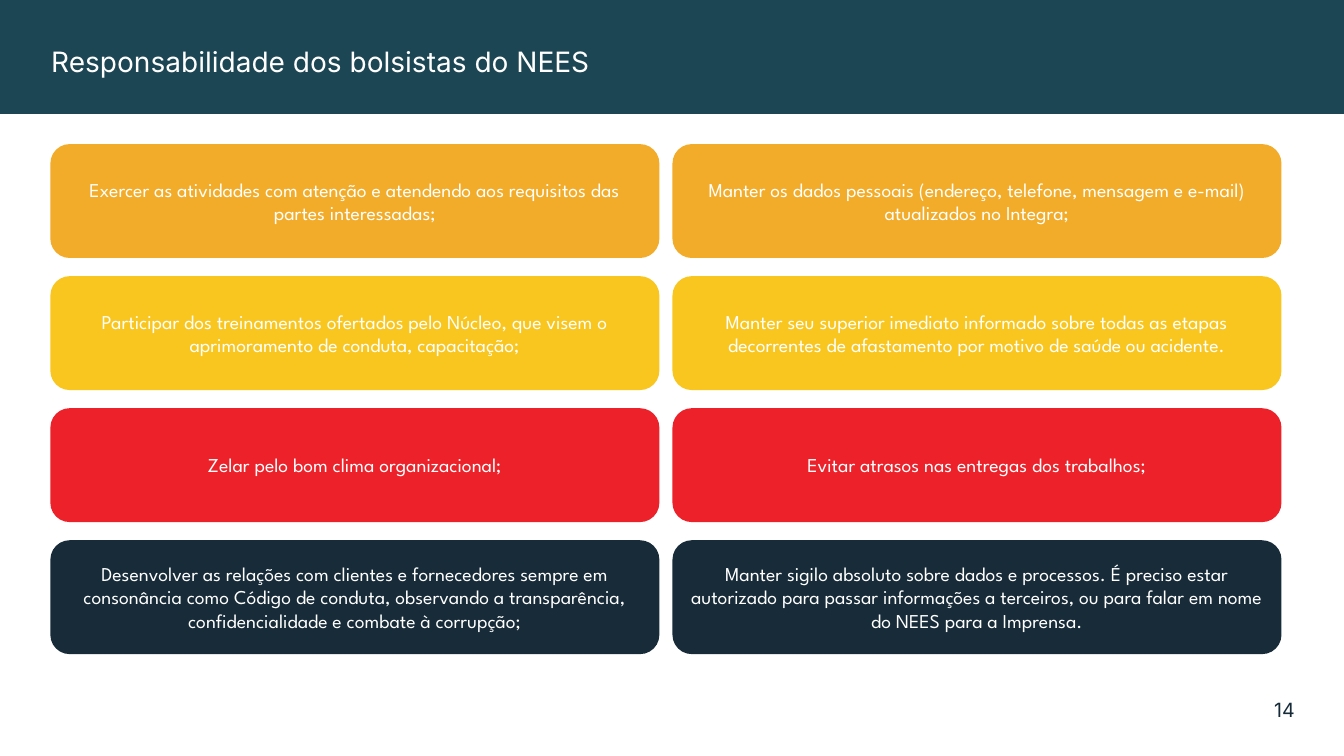
from pptx import Presentation
from pptx.dml.color import RGBColor
from pptx.enum.shapes import MSO_SHAPE
from pptx.enum.text import MSO_ANCHOR, PP_ALIGN
from pptx.util import Inches, Pt

THEME = {
    "band": "1C4654", "light": "FFFFFF", "number": "162B39",
    "rows": ["F2AC29", "F9C620", "ED2129", "182B39"],
    "heading_font": "Inter", "body_font": "League Spartan",
    "title_size": 20, "body_size": 14,
}

# Grid of cards, in inches
LEFT, TOP = 0.5, 1.43
CARD_W, CARD_H = 6.04, 1.13
COL_STEP, ROW_STEP = 6.17, 1.31

DUTIES = [
    ("Exercer as atividades com atenção e atendendo aos requisitos das partes interessadas;",
     "Manter os dados pessoais (endereço, telefone, mensagem e e-mail) atualizados no Integra;"),
    ("Participar dos treinamentos ofertados pelo Núcleo, que visem o aprimoramento de conduta, capacitação;",
     "Manter seu superior imediato informado sobre todas as etapas decorrentes de afastamento "
     "por motivo de saúde ou acidente."),
    ("Zelar pelo bom clima organizacional;",
     "Evitar atrasos nas entregas dos trabalhos;"),
    ("Desenvolver as relações com clientes e fornecedores sempre em consonância como Código de conduta, "
     "observando a transparência, confidencialidade e combate à corrupção;",
     "Manter sigilo absoluto sobre dados e processos. É preciso estar autorizado para passar "
     "informações a terceiros, ou para falar em nome do NEES para a Imprensa."),
]


def add_block(kind, left, top, width, height, color):
    block = slide.shapes.add_shape(kind, Inches(left), Inches(top), Inches(width), Inches(height))
    block.shadow.inherit = False
    block.fill.solid()
    block.fill.fore_color.rgb = RGBColor.from_string(color)
    block.line.fill.background()
    return block


def write(holder, text, font, size, color, align):
    frame = holder.text_frame
    frame.word_wrap = True
    frame.text = text
    paragraph = frame.paragraphs[0]
    paragraph.alignment = align
    style = paragraph.runs[0].font
    style.name, style.size = font, Pt(size)
    style.color.rgb = RGBColor.from_string(color)


deck = Presentation()
deck.slide_width, deck.slide_height = Inches(13.33), Inches(7.5)
slide = deck.slides.add_slide(deck.slide_layouts[6])

# Page number
page_number = slide.shapes.add_textbox(Inches(12.1), Inches(6.87), Inches(0.84), Inches(0.34))
write(page_number, "14", THEME["heading_font"], THEME["body_size"], THEME["number"], PP_ALIGN.RIGHT)

# Title band
add_block(MSO_SHAPE.RECTANGLE, 0, 0, 13.33, CARD_H, THEME["band"])
title = slide.shapes.add_textbox(Inches(0.41), Inches(0.39), Inches(12.2), Inches(0.44))
write(title, "Responsabilidade dos bolsistas do NEES", THEME["heading_font"],
      THEME["title_size"], THEME["light"], PP_ALIGN.LEFT)

# Duty cards: one colour per row
for row, (duties, color) in enumerate(zip(DUTIES, THEME["rows"])):
    for col, duty in enumerate(duties):
        card = add_block(MSO_SHAPE.ROUNDED_RECTANGLE, LEFT + col * COL_STEP, TOP + row * ROW_STEP,
                         CARD_W, CARD_H, color)
        card.adjustments[0] = 0.17
        frame = card.text_frame
        frame.vertical_anchor = MSO_ANCHOR.MIDDLE
        frame.margin_top = frame.margin_bottom = Inches(0.1)
        write(card, duty, THEME["body_font"], THEME["body_size"], THEME["light"], PP_ALIGN.CENTER)

deck.save("out.pptx")
